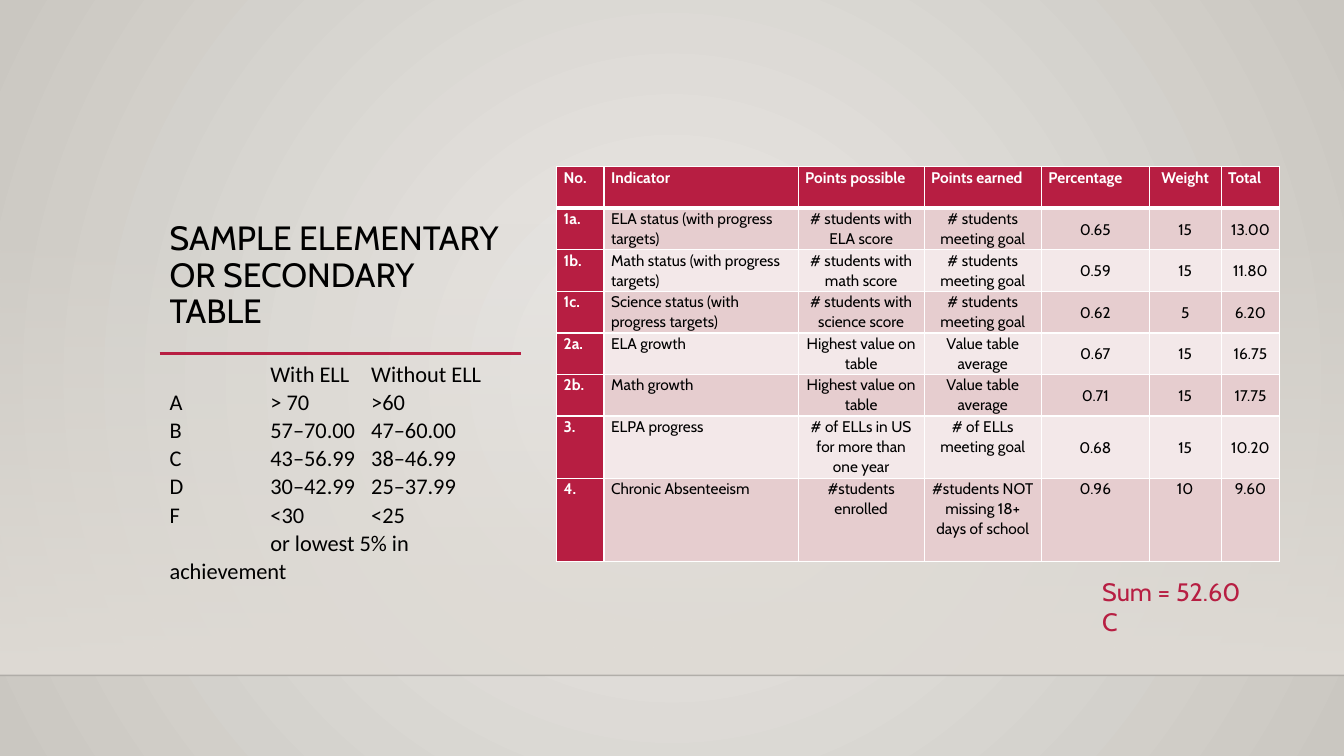
from lxml import etree
from pptx import Presentation, util as u
from pptx.dml.color import RGBColor
from pptx.enum import shapes, text
from pptx.oxml import ns, parse_xml

RED = RGBColor(0xB7, 0x1E, 0x42)
ROSE = RGBColor(0xE6, 0xCD, 0xCF)
PALE = RGBColor(0xF3, 0xE8, 0xE9)
WHITE = RGBColor(0xFF, 0xFF, 0xFF)
BLACK = RGBColor(0, 0, 0)
SAND = RGBColor(0xDF, 0xDB, 0xD5)
MIST = RGBColor(0xEC, 0xEA, 0xE7)
STONE = RGBColor(0xCA, 0xC7, 0xC1)

LEFT, MID = text.PP_ALIGN.LEFT, text.PP_ALIGN.CENTER
TOP, CORE, LOW = (text.MSO_ANCHOR.TOP, text.MSO_ANCHOR.MIDDLE,
                  text.MSO_ANCHOR.BOTTOM)
RADIAL = ('<a:path path="circle"><a:fillToRect l="50000" t="50000" '
          'r="50000" b="50000"/></a:path>')
DOWN = '<a:lin ang="5400000" scaled="0"/>'


def put(obj, vals):
    for name, val in vals.items():
        setattr(obj, name, val)


class Deck:
    """Style and current slide; lengths are grid units, 160 by 90."""
    unit = u.Inches(1) / 12
    fonts = {"head": "Cabin", "body": "Calibri"}

    def __init__(self):
        self.prs = Presentation()
        put(self.prs, {"slide_width": u.Inches(13.33),
                       "slide_height": u.Inches(7.5)})
        self.page = self.prs.slides.add_slide(self.prs.slide_layouts[6])

    def grid(self, *vals):
        return [u.Emu(round(v * self.unit)) for v in vals]

    def blend(self, fill, props, stops, shade):
        """Swap a fill for a gradient of (colour, opacity) stops."""
        fill.gradient()
        old = props.find(ns.qn("a:gradFill"))
        marks = "".join(
            f'<a:gs pos="{pos}"><a:srgbClr val="{tone}">'
            f'<a:alpha val="{clear}"/></a:srgbClr></a:gs>'
            for pos, (tone, clear) in zip((0, 100000), stops))
        props.replace(old, parse_xml(
            f'<a:gradFill {ns.nsdecls("a")} rotWithShape="1">'
            f'<a:gsLst>{marks}</a:gsLst>{shade}</a:gradFill>'))

    def back(self, inner, outer):
        fill = self.page.background.fill
        fill.solid()
        props = self.page.element.find(".//" + ns.qn("p:bgPr"))
        self.blend(fill, props, [(inner, 100000), (outer, 100000)], RADIAL)

    def fade(self, box, tone):
        shape = self.page.shapes.add_shape(
            shapes.MSO_SHAPE.RECTANGLE, *self.grid(*box))
        shape.shadow.inherit = False
        shape.line.fill.background()
        self.blend(shape.fill, shape.element.spPr,
                   [(tone, 0), (tone, 100000)], DOWN)

    def rule(self, left, right, row, tone, width, clear=None):
        line = self.page.shapes.add_connector(
            shapes.MSO_CONNECTOR.STRAIGHT, *self.grid(left, row, right, row))
        line.line.color.rgb = tone
        line.line.width = u.Pt(width)
        props = line.element.spPr
        if clear:
            etree.SubElement(props.find(".//" + ns.qn("a:srgbClr")),
                             ns.qn("a:alpha"), val=str(clear * 1000))
        etree.SubElement(props, ns.qn("a:effectLst"))

    def style(self, par, words, font, size, tone, bold=False,
              align=LEFT, gap=1.0, tabs=()):
        par.text = words
        put(par, {"alignment": align, "line_spacing": gap,
                  "space_before": u.Pt(0)})
        if tabs:
            stops = etree.SubElement(par._p.get_or_add_pPr(),
                                     ns.qn("a:tabLst"))
            for stop in self.grid(*tabs):
                etree.SubElement(stops, ns.qn("a:tab"),
                                 pos=str(stop), algn="l")
        put(par.font, {"name": self.fonts[font], "size": u.Pt(size),
                       "bold": bold})
        par.font.color.rgb = tone

    def block(self, box, lines, anchor=TOP, **look):
        frame = self.page.shapes.add_textbox(*self.grid(*box)).text_frame
        put(frame, {"word_wrap": True, "vertical_anchor": anchor})
        for i, words in enumerate(lines):
            par = frame.add_paragraph() if i else frame.paragraphs[0]
            self.style(par, words, **look)

    def edge(self, cell, row):
        props = cell._tc.get_or_add_tcPr()
        wide = {"T": 3 if row == 1 else 1, "B": 3 if row == 0 else 1}
        for side in "LRTB":
            line = etree.SubElement(props, ns.qn("a:ln" + side),
                                    w=str(u.Pt(wide.get(side, 1))))
            fill = etree.SubElement(line, ns.qn("a:solidFill"))
            etree.SubElement(fill, ns.qn("a:srgbClr"), val=str(WHITE))

    def table(self, left, top, cols, rows, data):
        table = self.page.shapes.add_table(
            len(rows), len(cols),
            *self.grid(left, top, sum(cols), sum(rows))).table
        put(table, {"first_row": False, "horz_banding": False})
        for col, wide in zip(table.columns, self.grid(*cols)):
            col.width = wide
        for row, tall in zip(table.rows, self.grid(*rows)):
            row.height = tall
        for r, line in enumerate(data):
            for c, words in enumerate(line):
                self.cell(table.cell(r, c), r, c, words, len(rows) - 1)

    def cell(self, cell, r, c, words, last):
        head = r == 0 or c == 0
        centre = c == 5 if r == 0 else c > 1
        self.edge(cell, r)
        cell.fill.solid()
        cell.fill.fore_color.rgb = RED if head else ROSE if r % 2 else PALE
        side = u.Inches(0.07)
        put(cell, {"margin_left": side, "margin_right": side,
                   "margin_top": 0, "margin_bottom": 0,
                   "vertical_anchor": CORE if c > 3 and 0 < r < last
                   else TOP})
        self.style(cell.text_frame.paragraphs[0], words, "head", 11,
                   WHITE if head else BLACK, head,
                   MID if centre else LEFT, 1.07)


GOAL = "# students meeting goal"
PEAK, MEAN = "Highest value on table", "Value table average"
SCORES = [
    ("No.", "Indicator", "Points possible", "Points earned",
     "Percentage", "Weight", "Total"),
    ("1a.", "ELA status (with progress targets)",
     "# students with ELA score", GOAL, "0.65", "15", "13.00"),
    ("1b.", "Math status (with progress targets)",
     "# students with math score", GOAL, "0.59", "15", "11.80"),
    ("1c.", "Science status (with progress targets)",
     "# students with science score", GOAL, "0.62", "5", "6.20"),
    ("2a.", "ELA growth", PEAK, MEAN, "0.67", "15", "16.75"),
    ("2b.", "Math growth", PEAK, MEAN, "0.71", "15", "17.75"),
    ("3.", "ELPA progress", "# of ELLs in US for more than one year",
     "# of ELLs meeting goal", "0.68", "15", "10.20"),
    ("4.", "Chronic Absenteeism", "#students enrolled",
     "#students NOT missing 18+ days of school", "0.96", "10", "9.60"),
]
GRADES = [
    "\tWith ELL\tWithout ELL",
    "A\t> 70\t>60",
    "B\t57–70.00\t47–60.00",
    "C\t43–56.99\t38–46.99",
    "D\t30–42.99\t25–37.99",
    "F\t<30\t<25",
    "\tor lowest 5% in achievement",
]


def main():
    deck = Deck()
    # Backdrop and floor line
    deck.back(MIST, STONE)
    deck.fade((0, 26.5, 160, 53.9), SAND)
    deck.rule(0, 160, 80.4, BLACK, 1, clear=20)
    # Title and grade bands
    deck.rule(19, 62, 42.1, RED, 2.5)
    deck.block((19, 10.45, 43, 29.5), ["SAMPLE ELEMENTARY OR SECONDARY TABLE"],
               LOW, font="head", size=24, tone=BLACK, gap=0.9)
    deck.block((19, 42.1, 45, 29.5), GRADES, font="body", size=16,
               tone=BLACK, gap=1.05, tabs=(12, 24))
    # Score table and its sum
    deck.table(66.25, 19.85, (5.65, 23.1, 15, 13.95, 12.85, 8.55, 7),
               [4.95] * 6 + [7.4, 9.95], SCORES)
    deck.block((130, 68, 22.5, 8.4), ["Sum = 52.60\vC"],
               font="head", size=18, tone=RED)
    deck.prs.save("out.pptx")


if __name__ == "__main__":
    main()
